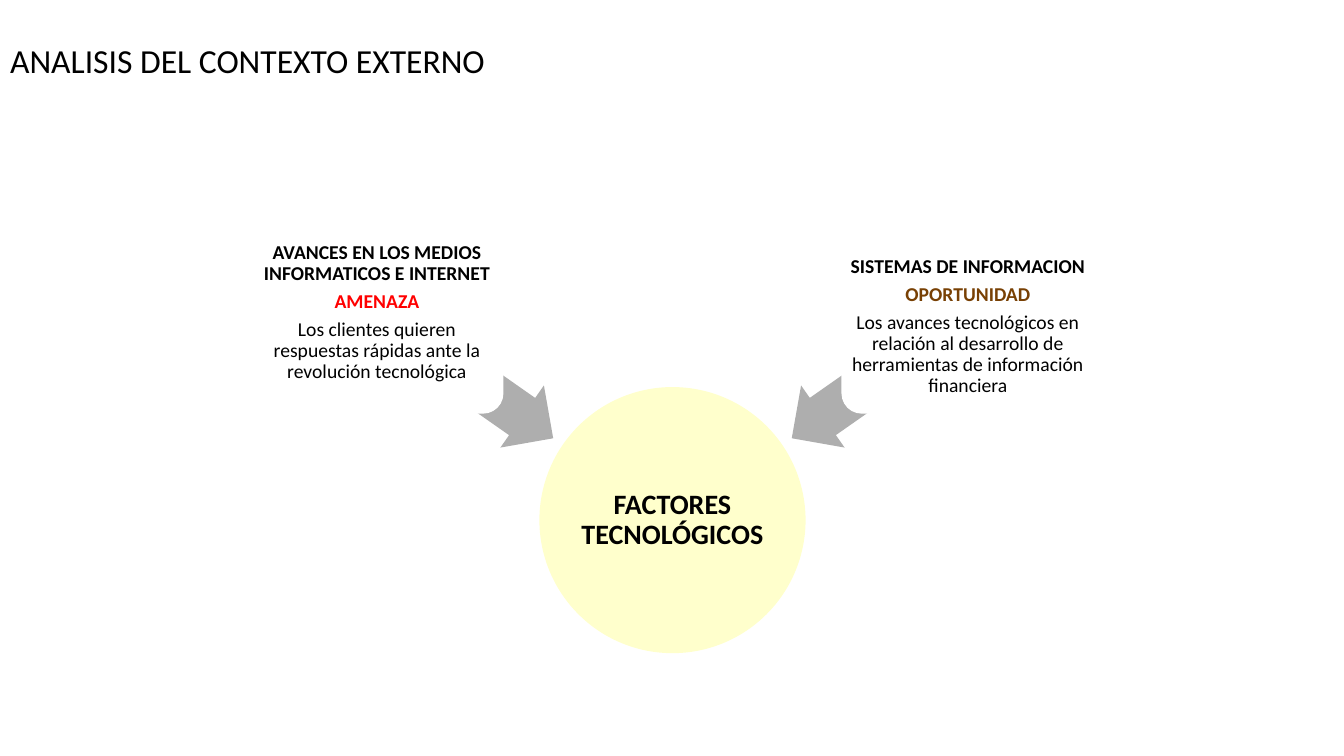
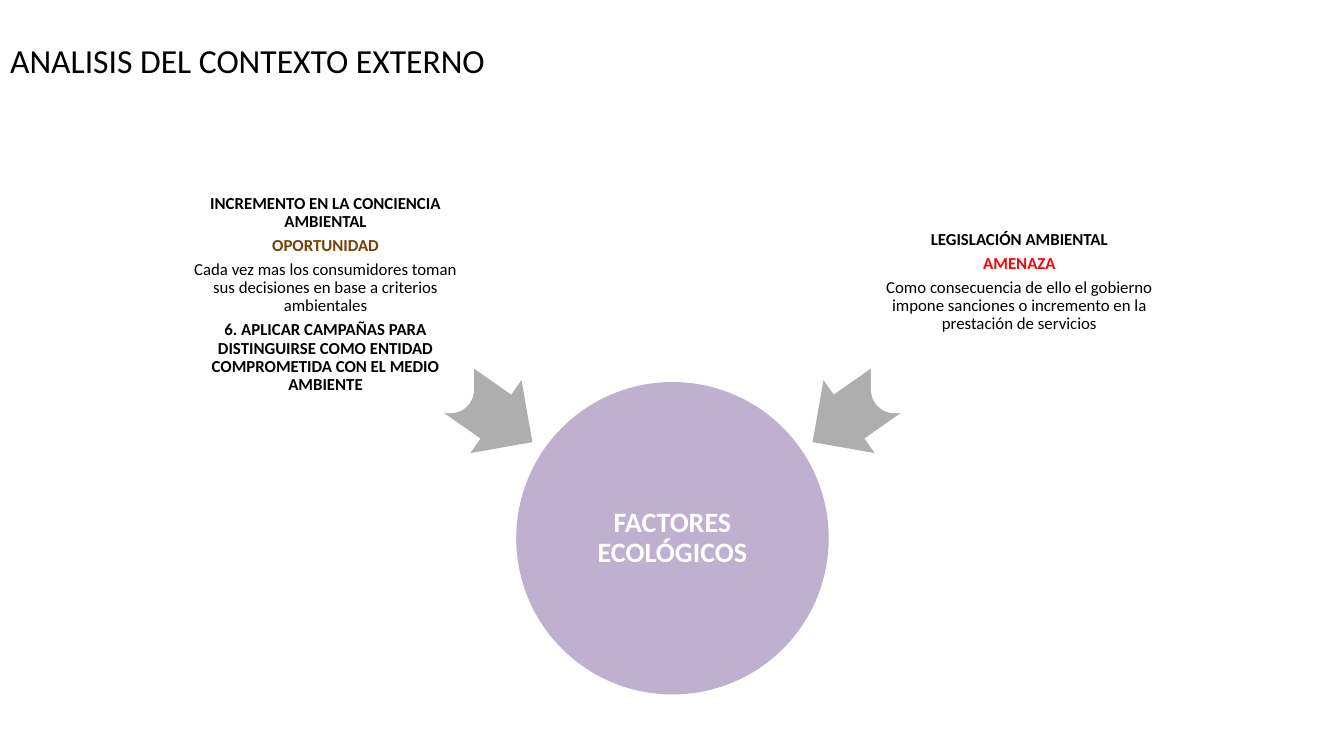
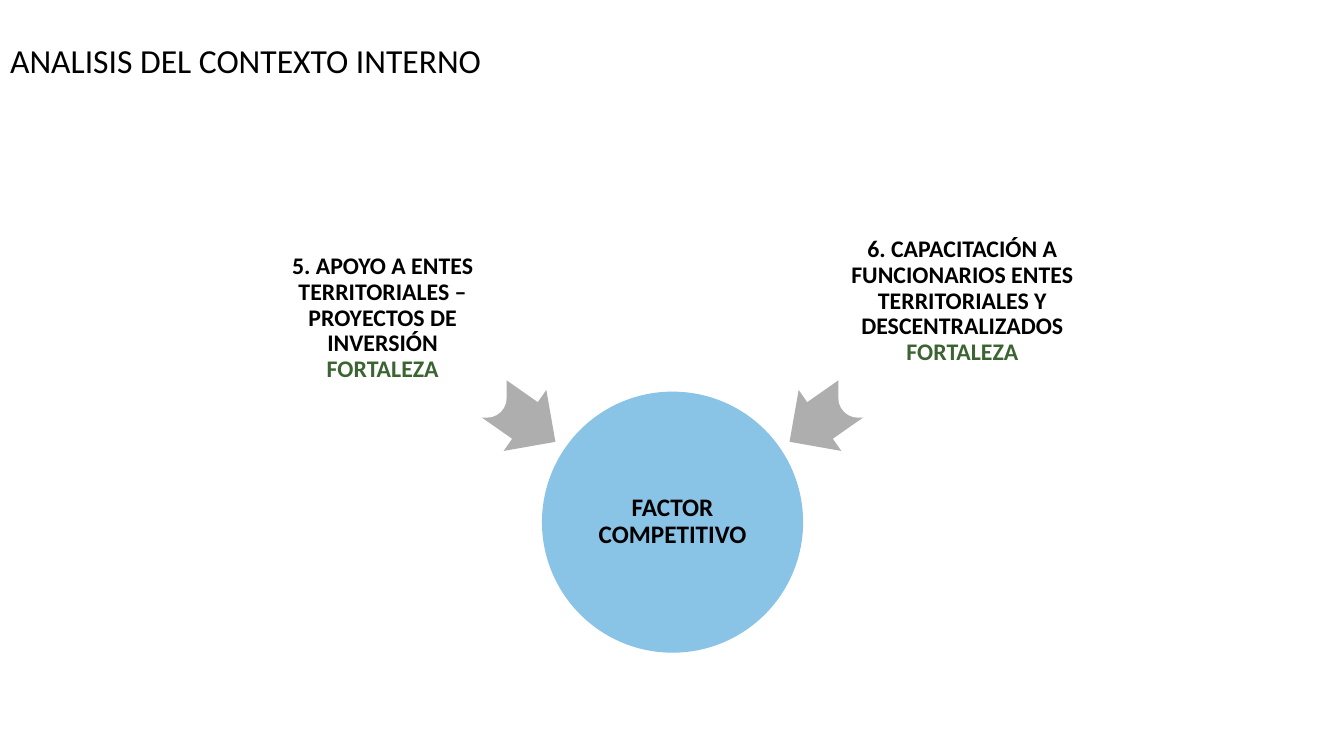
from pptx import Presentation
from pptx import util as u
from pptx.dml.color import RGBColor
from pptx.enum import shapes, text

KIND = shapes.MSO_SHAPE
ALIGN = text.PP_ALIGN
BLACK, WHITE, GREY = "000000", "FFFFFF", "AEAEAE"
HEAD = {"color": BLACK, "bold": True}
BODY = {"color": BLACK, "bold": False}
THREAT = {"color": "FF0000", "bold": True}
CHANCE = {"color": "784004", "bold": True}
FORCE = {"color": "3B6432", "bold": True}


def rgb(code):
    return RGBColor.from_string(code)


class Deck:
    font = "Calibri"
    mid = 6.67

    def __init__(self):
        self.prs = Presentation()
        self.prs.slide_width = u.Inches(13.33)
        self.prs.slide_height = u.Inches(7.5)
        self.slide = None

    def page(self, title):
        self.slide = self.prs.slides.add_slide(self.prs.slide_layouts[5])
        box = self.slide.shapes.title
        place = {"left": 0, "top": 0, "width": 7.55, "height": 1.24}
        for key, val in place.items():
            setattr(box, key, u.Inches(val))
        self.label(box, [[(title, BODY)]], 24, ALIGN.LEFT, 0)

    def label(self, shape, paras, size, align=ALIGN.CENTER, after=0.35):
        """Fill a shape with paragraphs; runs of one paragraph sit on separate lines."""
        frame = shape.text_frame
        frame.word_wrap = True
        frame.vertical_anchor = text.MSO_ANCHOR.MIDDLE
        for num, runs in enumerate(paras):
            para = frame.paragraphs[0] if num == 0 else frame.add_paragraph()
            form = {"alignment": align, "line_spacing": 0.9,
                    "space_before": u.Pt(0), "space_after": u.Pt(size * after)}
            for key, val in form.items():
                setattr(para, key, val)
            for pos, (words, style) in enumerate(runs):
                if pos:
                    para.add_line_break()
                run = para.add_run()
                run.text = words
                look = {"name": self.font, "size": u.Pt(size), "bold": style["bold"]}
                for key, val in look.items():
                    setattr(run.font, key, val)
                run.font.color.rgb = rgb(style["color"])

    def shape(self, kind, x, y, wide, high, fill, inset=0.0):
        """Add a plain preset shape centred on x, y."""
        item = self.slide.shapes.add_shape(
            kind, u.Inches(x - wide / 2), u.Inches(y - high / 2),
            u.Inches(wide), u.Inches(high))
        item.shadow.inherit = False
        item.fill.solid()
        item.fill.fore_color.rgb = rgb(fill)
        item.line.fill.background()
        for side in ("left", "top", "right", "bottom"):
            setattr(item.text_frame, "margin_" + side, u.Inches(inset))
        return item

    def hub(self, name, y, size, fill, color, points):
        """Add the circle, with its size as the unit for all other parts."""
        disc = self.shape(KIND.OVAL, self.mid, y, size, size, fill, 0.01)
        self.label(disc, [[(name, {"color": color, "bold": True})]], points)

    def arrow(self, side, y, size):
        item = self.shape(KIND.LEFT_ARROW, self.mid + side * 0.78 * size,
                          y - 0.54 * size, 0.81 * size, 0.285 * size, GREY)
        item.adjustments[0] = 0.6
        item.adjustments[1] = 0.5
        item.rotation = 270 + side * 55

    def card(self, side, y, size, paras, points, pad):
        """Add a text card; pad adds room above and below the text."""
        wide = 0.95 * size
        item = self.shape(KIND.ROUNDED_RECTANGLE, self.mid + side * 1.11 * size,
                          y - 0.78 * size, wide, 0.8 * wide, WHITE, 0.03)
        item.adjustments[0] = 0.1
        item.text_frame.margin_top = u.Inches(0.03 + pad[0])
        item.text_frame.margin_bottom = u.Inches(0.03 + pad[1])
        self.label(item, paras, points)


PAGES = [
    {"title": "ANALISIS DEL CONTEXTO EXTERNO",
     "name": "FACTORES TECNOLÓGICOS", "y": 5.16, "size": 2.64,
     "fill": "FFFFCC", "color": BLACK, "big": 20, "small": 14,
     "cards": [
         ((0, 0), [
             [("AVANCES EN LOS MEDIOS INFORMATICOS E INTERNET", HEAD)],
             [("AMENAZA", THREAT)],
             [("Los clientes quieren respuestas rápidas ante la revolución "
               "tecnológica", BODY)]]),
         ((0.28, 0), [
             [("SISTEMAS DE INFORMACION", HEAD)],
             [("OPORTUNIDAD", CHANCE)],
             [("Los avances tecnológicos en relación al desarrollo de "
               "herramientas de información financiera", BODY)]])]},
    {"title": "ANALISIS DEL CONTEXTO EXTERNO",
     "name": "FACTORES ECOLÓGICOS", "y": 5.34, "size": 3.1,
     "fill": "BFB0CF", "color": WHITE, "big": 20, "small": 12,
     "cards": [
         ((0, 0), [
             [("INCREMENTO EN LA CONCIENCIA AMBIENTAL", HEAD)],
             [("OPORTUNIDAD", CHANCE)],
             [("Cada vez mas los consumidores toman sus decisiones en base a "
               "criterios ambientales", BODY)],
             [("6. APLICAR CAMPAÑAS PARA DISTINGUIRSE COMO ENTIDAD "
               "COMPROMETIDA CON EL MEDIO AMBIENTE", HEAD)]]),
         ((0, 0.24), [
             [("LEGISLACIÓN AMBIENTAL", HEAD)],
             [("AMENAZA", THREAT)],
             [("Como consecuencia de ello el gobierno impone sanciones o "
               "incremento en la prestación de servicios", BODY)]])]},
    {"title": "ANALISIS DEL CONTEXTO INTERNO",
     "name": "FACTOR COMPETITIVO", "y": 5.18, "size": 2.59,
     "fill": "89C3E5", "color": BLACK, "big": 18, "small": 17,
     "cards": [
         ((0, 0), [
             [("5. APOYO A ENTES TERRITORIALES – PROYECTOS DE INVERSIÓN", HEAD),
              ("FORTALEZA", FORCE)]]),
         ((0, 0.34), [
             [("6. CAPACITACIÓN A FUNCIONARIOS ENTES TERRITORIALES Y "
               "DESCENTRALIZADOS", HEAD),
              ("FORTALEZA", FORCE)]])]},
]


def main():
    deck = Deck()
    for page in PAGES:
        y, size = page["y"], page["size"]
        deck.page(page["title"])
        deck.hub(page["name"], y, size, page["fill"], page["color"], page["big"])
        for side, (pad, paras) in zip((-1, 1), page["cards"]):
            deck.arrow(side, y, size)
            deck.card(side, y, size, paras, page["small"], pad)
    deck.prs.save("out.pptx")


if __name__ == "__main__":
    main()
